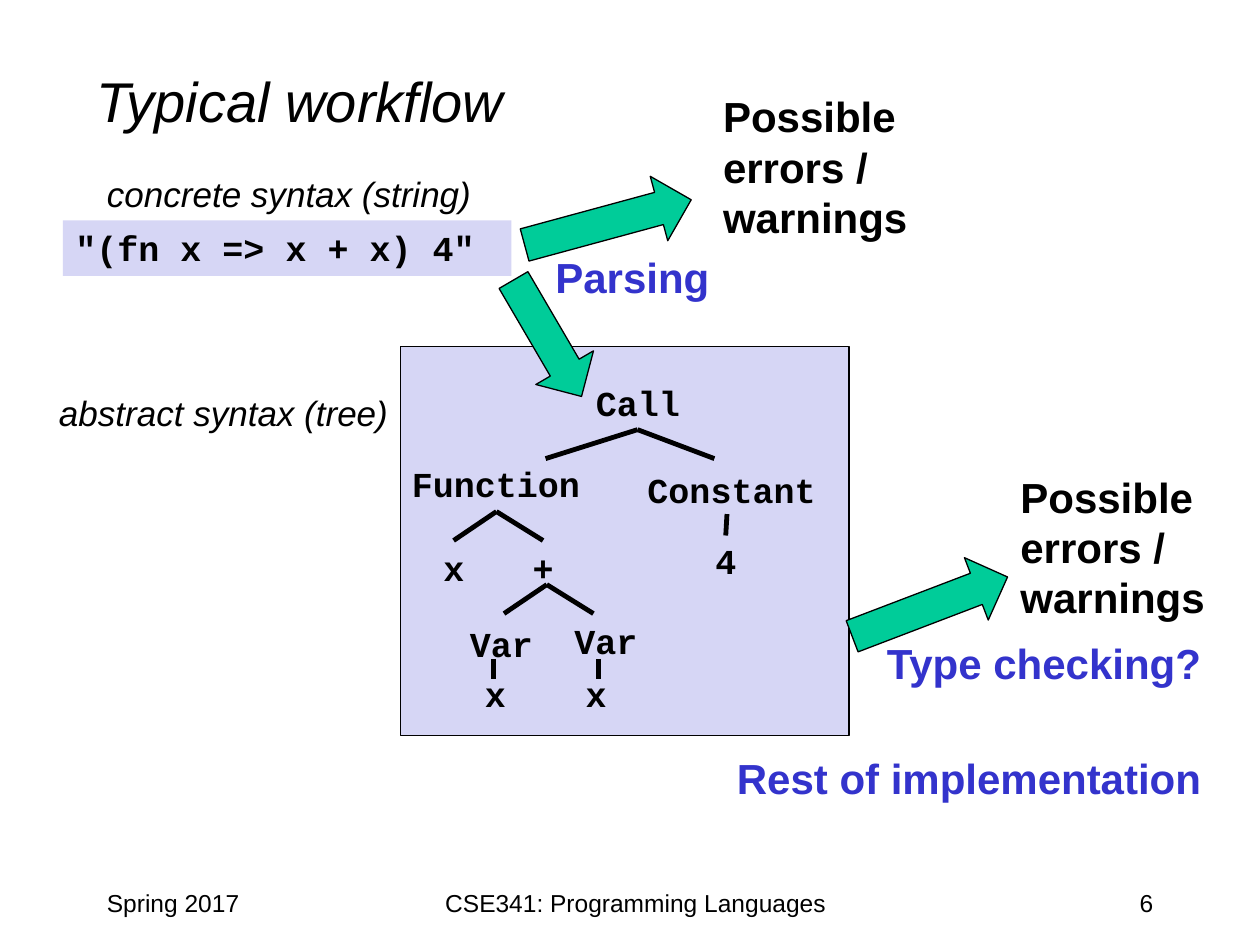
"""Build the "Typical workflow" slide: parsing a string into a syntax tree."""
import pptx
import pptx.dml.color
import pptx.enum.shapes
import pptx.enum.text
import pptx.oxml
import pptx.util
from pptx.util import Inches

ALIGN = pptx.enum.text.PP_ALIGN
SHAPES = pptx.enum.shapes.MSO_SHAPE


def color(value):
    return pptx.dml.color.RGBColor.from_string(value)


def add_text(box, text, size, font="Arial", ink="000000", bold=False, italic=False,
             align=ALIGN.LEFT, anchor=pptx.enum.text.MSO_ANCHOR.TOP, wrap=False):
    left, top, width, height = map(Inches, box)
    shape = slide.shapes.add_textbox(left, top, width, height)
    frame = shape.text_frame
    frame.word_wrap = wrap
    frame.vertical_anchor = anchor
    frame.text = text
    for paragraph in frame.paragraphs:
        paragraph.alignment = align
        paragraph.font.name = font
        paragraph.font.size = pptx.util.Pt(size)
        paragraph.font.bold = bold
        paragraph.font.italic = italic
        paragraph.font.color.rgb = color(ink)
    return shape


presentation = pptx.Presentation()
presentation.slide_width = Inches(10)
presentation.slide_height = Inches(7.5)
slide = presentation.slides.add_slide(presentation.slide_layouts[6])

add_text((0.67, 0.17, 8.5, 1.25), "Typical workflow", 32, italic=True,
         anchor=pptx.enum.text.MSO_ANCHOR.MIDDLE, wrap=True)
for left, width, text, align in [
    (0.75, 2.08, "Spring 2017", ALIGN.LEFT),
    (3.17, 3.75, "CSE341: Programming Languages", ALIGN.CENTER),
    (7.17, 2.08, "6", ALIGN.RIGHT),
]:
    add_text((left, 7, width, 0.5), text, 14, align=align, wrap=True)

source_code = add_text((0.5, 1.75, 3.56, 0.44), '"(fn x => x + x) 4"', 20,
                       "Courier New", bold=True, wrap=True)
source_code.fill.solid()
source_code.fill.fore_color.rgb = color("D6D6F5")

tree_panel = slide.shapes.add_shape(
    SHAPES.RECTANGLE, Inches(3.18), Inches(2.75), Inches(3.56), Inches(3.09))
tree_panel.shadow.inherit = False
tree_panel.fill.solid()
tree_panel.fill.fore_color.rgb = color("D6D6F5")
tree_panel.line.color.rgb = color("000000")
tree_panel.line.width = pptx.util.Pt(0.75)

for left, top, width, text in [
    (4.63, 2.98, 0.88, "Call"),
    (3.17, 3.62, 1.55, "Function"),
    (5.04, 3.67, 1.55, "Constant"),
    (3.42, 4.29, 0.37, "x"),
    (4.13, 4.29, 0.37, "+"),
    (5.58, 4.23, 0.37, "4"),
    (3.63, 4.89, 0.71, "Var"),
    (4.46, 4.87, 0.71, "Var"),
    (3.75, 5.29, 0.37, "x"),
    (4.55, 5.29, 0.37, "x"),
]:
    add_text((left, top, width, 0.44), text, 20, "Courier New", bold=True)

for parent_x, parent_y, child_y, children_x in [
    (5.06, 3.41, 3.64, (4.33, 5.67)),
    (3.94, 4.06, 4.29, (3.6, 4.31)),
    (4.34, 4.64, 4.87, (4, 4.71)),
    (5.77, 4.08, 4.25, (5.76,)),
    (3.92, 5.23, 5.39, (3.92,)),
    (4.75, 5.23, 5.39, (4.75,)),
]:
    for child_x in children_x:
        branch = slide.shapes.add_connector(
            pptx.enum.shapes.MSO_CONNECTOR.STRAIGHT,
            Inches(parent_x), Inches(parent_y), Inches(child_x), Inches(child_y))
        branch.line.color.rgb = color("000000")
        branch.line.width = pptx.util.Pt(2.75)
        branch._element.spPr.append(pptx.oxml.parse_xml(
            '<a:effectLst xmlns:a="http://schemas.openxmlformats.org/drawingml/2006/main"/>'))

for left, top, width, rotation in [
    (6.72, 4.55, 1.32, 339.1),
    (4.14, 1.5, 1.37, 344.8),
    (3.81, 2.42, 1.07, 59.7),
]:
    arrow = slide.shapes.add_shape(
        SHAPES.RIGHT_ARROW, Inches(left), Inches(top), Inches(width), Inches(0.53))
    arrow.rotation = rotation
    arrow.shadow.inherit = False
    arrow.fill.solid()
    arrow.fill.fore_color.rgb = color("00CC99")
    arrow.line.color.rgb = color("000000")
    arrow.line.width = pptx.util.Pt(0.75)

for left, top, width, text in [
    (4.31, 1.95, 1.44, "Parsing"),
    (6.94, 5.01, 2.72, "Type checking?"),
    (5.75, 5.92, 3.9, "Rest of implementation"),
]:
    add_text((left, top, width, 0.5), text, 24, ink="3333CC", bold=True)

for left, top in [(5.64, 0.67), (8, 3.69)]:
    add_text((left, top, 1.68, 1.31), "Possible\nerrors /\nwarnings", 24, bold=True)

for left, top, width, text in [
    (0.75, 1.32, 3.11, "concrete syntax (string)"),
    (0.37, 3.06, 2.83, "abstract syntax (tree)"),
]:
    add_text((left, top, width, 0.44), text, 20, italic=True)

presentation.save("out.pptx")
